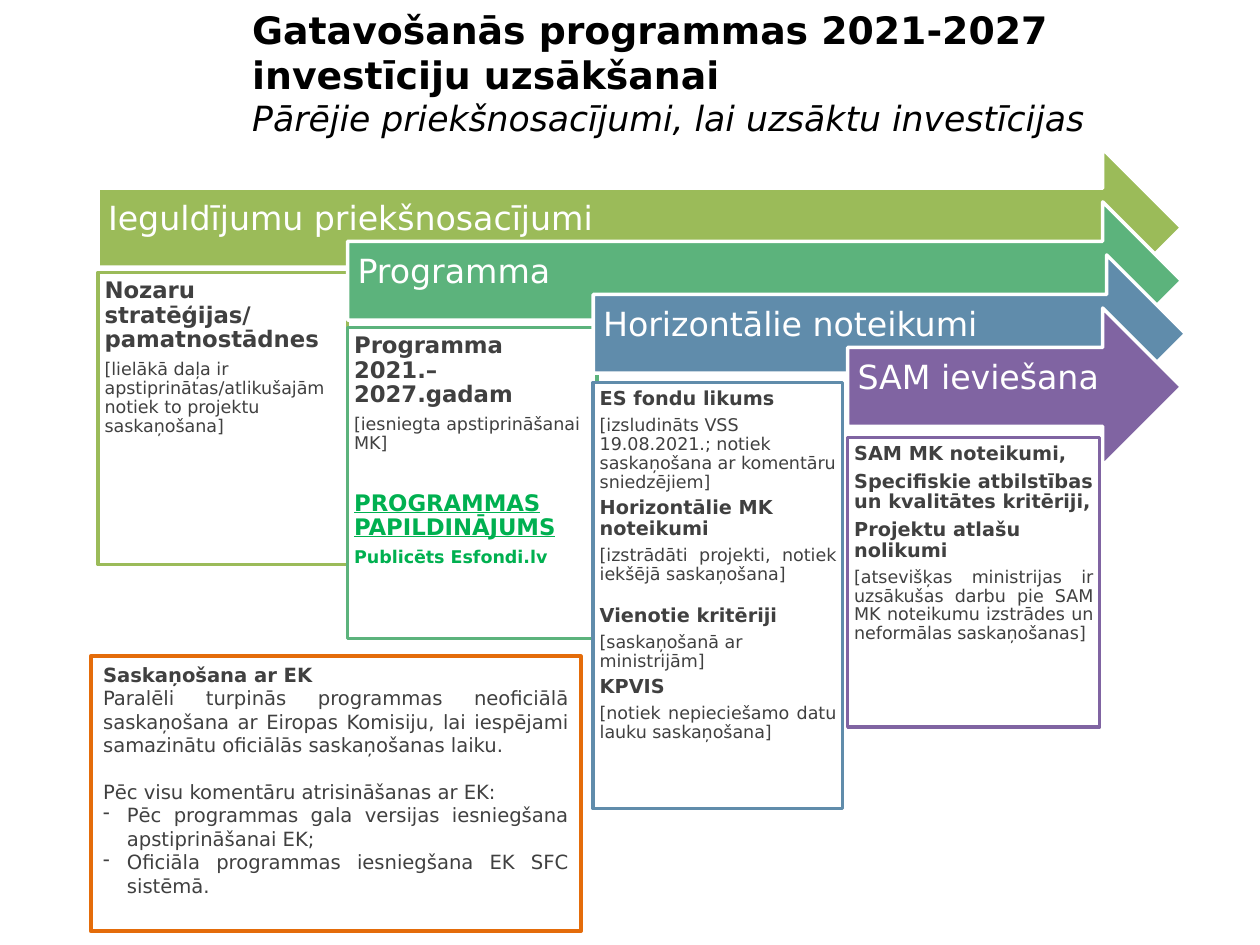
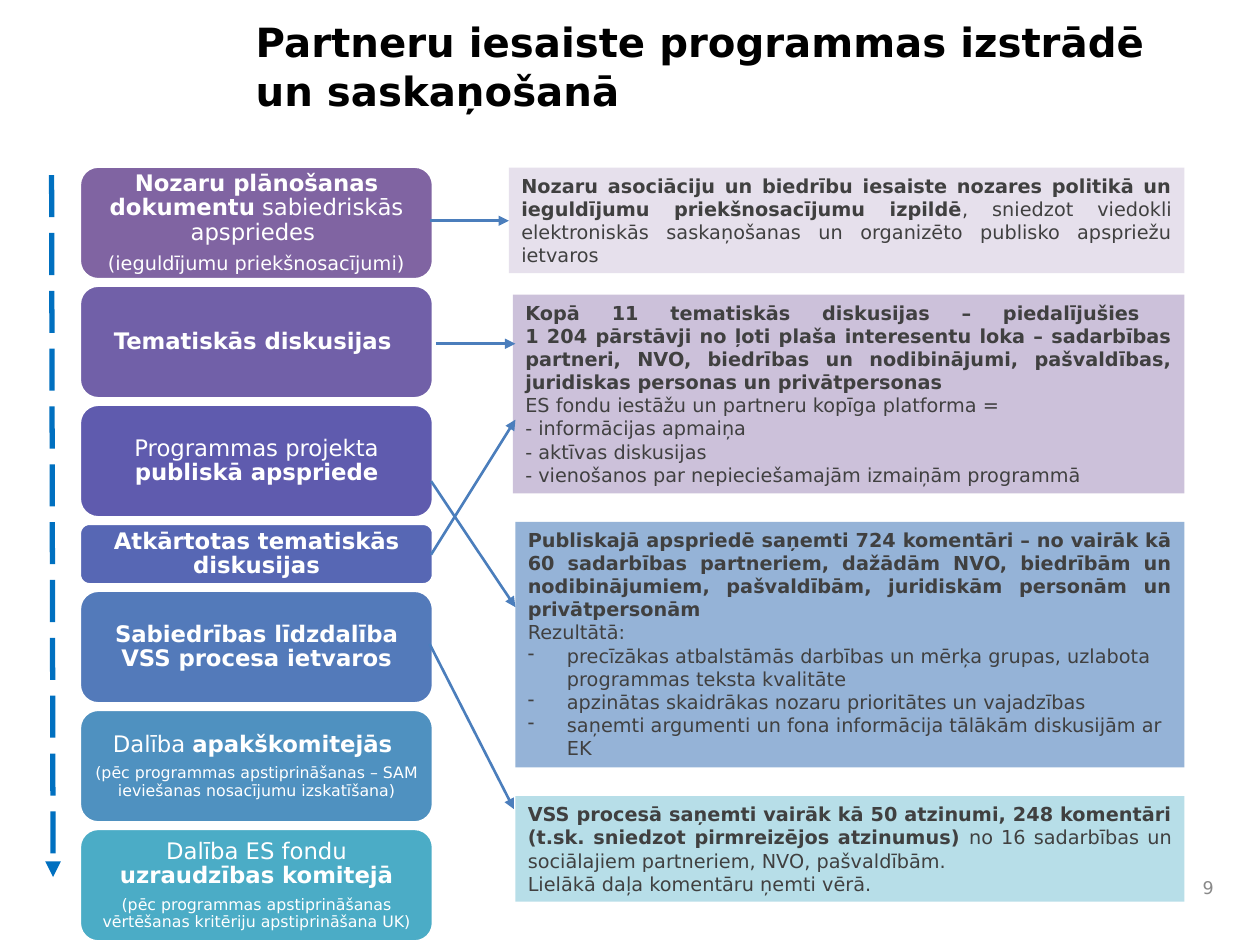
import copy
from dataclasses import dataclass
from typing import NamedTuple

import lxml.etree
import pptx
import pptx.dml.color
import pptx.enum.dml
import pptx.enum.shapes
import pptx.enum.text
import pptx.oxml.ns
import pptx.util

Cm = pptx.util.Cm
Pt = pptx.util.Pt
RGBColor = pptx.dml.color.RGBColor
Align = pptx.enum.text.PP_ALIGN
Anchor = pptx.enum.text.MSO_ANCHOR
Shape = pptx.enum.shapes.MSO_SHAPE
qn = pptx.oxml.ns.qn

FONT = "DejaVu Sans"
BLACK = RGBColor(0x00, 0x00, 0x00)
WHITE = RGBColor(0xFF, 0xFF, 0xFF)
TEXT_GREY = RGBColor(0x40, 0x40, 0x40)
NUMBER_GREY = RGBColor(0x89, 0x89, 0x89)
OLIVE = RGBColor(0x9B, 0xBB, 0x59)
GREEN = RGBColor(0x5C, 0xB3, 0x7C)
BRIGHT_GREEN = RGBColor(0x00, 0xB0, 0x50)
STEEL = RGBColor(0x60, 0x8C, 0xAB)
PURPLE = RGBColor(0x80, 0x64, 0xA2)
VIOLET = RGBColor(0x71, 0x60, 0xA8)
INDIGO = RGBColor(0x5F, 0x5B, 0xAE)
COBALT = RGBColor(0x57, 0x67, 0xB4)
BLUE = RGBColor(0x53, 0x7A, 0xBA)
SKY = RGBColor(0x4F, 0x91, 0xC0)
TEAL = RGBColor(0x4B, 0xAC, 0xC6)
ORANGE = RGBColor(0xE4, 0x6C, 0x0A)
PALE_LILAC = RGBColor(0xE6, 0xE0, 0xEC)
LILAC = RGBColor(0xCC, 0xC1, 0xDA)
PALE_BLUE = RGBColor(0x95, 0xB3, 0xD7)
PALE_TEAL = RGBColor(0xB7, 0xDE, 0xE8)
TIMELINE_BLUE = RGBColor(0x00, 0x70, 0xC0)
LINK_BLUE = RGBColor(0x4B, 0x7E, 0xBC)


class Box(NamedTuple):
    """Left, top, width and height in centimetres."""
    left: float
    top: float
    width: float
    height: float


class Span(NamedTuple):
    """Run of text; a final line feed breaks the line."""
    text: str
    size: float
    bold: bool = False
    italic: bool = False
    underline: bool = False
    color: RGBColor | None = None


@dataclass
class Para:
    spans: list[Span]
    align: Align = Align.LEFT
    before: float = 0
    dash_indent: float = 0


@dataclass
class Stage:
    name: str
    color: RGBColor
    left: float
    arrow_width: float
    box_width: float
    box_height: float
    paras: list[Para]


@dataclass
class Step:
    color: RGBColor
    paras: list[Para]
    height: float = 2.29


@dataclass
class Note:
    color: RGBColor
    left: float
    top: float
    height: float
    paras: list[Para]


def line(text: str, size: float, bold: bool = False, align: Align = Align.LEFT,
         before: float = 0, dash_indent: float = 0) -> Para:
    """Paragraph made of a single span."""
    return Para([Span(text, size, bold)], align, before, dash_indent)


def write(tf, paras: list[Para], color: RGBColor, tight: bool = False) -> None:
    """Fill a frame; tight text has 90% lines and gaps of 35% of its size."""
    tf.word_wrap = True
    tf.auto_size = pptx.enum.text.MSO_AUTO_SIZE.NONE
    for i, para in enumerate(paras):
        p = tf.paragraphs[0] if i == 0 else tf.add_paragraph()
        p.alignment = para.align
        if para.before:
            p.space_before = Pt(para.before)
        if tight:
            p.line_spacing = 0.9
            p.space_after = Pt(0.35 * para.spans[-1].size)
        if para.dash_indent:
            pPr = p._p.get_or_add_pPr()
            pPr.set("marL", str(Cm(para.dash_indent)))
            pPr.set("indent", str(-Cm(para.dash_indent)))
            lxml.etree.SubElement(pPr, qn("a:buChar")).set("char", "-")
        for span in para.spans:
            r = p.add_run()
            r.text = span.text.removesuffix("\n")
            r.font.name = FONT
            r.font.size = Pt(span.size)
            r.font.bold = span.bold
            r.font.italic = span.italic
            r.font.underline = span.underline
            r.font.color.rgb = span.color or color
            if span.text.endswith("\n"):
                p.add_line_break()
                p._p[-1].append(copy.deepcopy(r._r.rPr))


def add_title(s, box: Box, spans: list[Span]) -> None:
    title = s.shapes.title
    title.left, title.top, title.width, title.height = map(Cm, box)
    title.text_frame.vertical_anchor = Anchor.TOP
    write(title.text_frame, [Para(spans)], BLACK)


def add_block(s, kind: Shape, box: Box, fill: RGBColor | None, outline: RGBColor | None,
              weight: float = 2, anchor: Anchor = Anchor.TOP,
              margins: tuple[float, float, float, float] = (0.25, 0.13, 0.25, 0.13)):
    """Add a flat shape and return its text frame."""
    sp = s.shapes.add_shape(kind, *map(Cm, box))
    sp.shadow.inherit = False
    if fill is None:
        sp.fill.background()
    else:
        sp.fill.solid()
        sp.fill.fore_color.rgb = fill
    if outline is None:
        sp.line.fill.background()
    else:
        sp.line.color.rgb = outline
        sp.line.width = Pt(weight)
    tf = sp.text_frame
    tf.vertical_anchor = anchor
    tf.margin_left, tf.margin_top, tf.margin_right, tf.margin_bottom = map(Cm, margins)
    return tf


def add_arrow_line(s, ends: tuple[float, float, float, float], color: RGBColor,
                   weight: float, dashed: bool = False) -> None:
    cxn = s.shapes.add_connector(pptx.enum.shapes.MSO_CONNECTOR.STRAIGHT, *map(Cm, ends))
    cxn.line.color.rgb = color
    cxn.line.width = Pt(weight)
    if dashed:
        cxn.line.dash_style = pptx.enum.dml.MSO_LINE.LONG_DASH
    lxml.etree.SubElement(cxn.line._get_or_add_ln(), qn("a:tailEnd")).set("type", "triangle")
    lxml.etree.SubElement(cxn._element.spPr, qn("a:effectLst"))


STAGES = [
    Stage("Ieguldījumu priekšnosacījumi", OLIVE, 1.98, 21.84, 5.03, 5.89, [
        line("Nozaru stratēģijas/ pamatnostādnes", 13, True),
        line("[lielākā daļa ir apstiprinātas/atlikušajām notiek to projektu saskaņošana]", 10),
    ]),
    Stage("Programma", GREEN, 7.01, 16.81, 5.03, 6.27, [
        line("Programma 2021.–2027.gadam", 13, True),
        line("[iesniegta apstiprināšanai MK]", 10),
        Para([Span("PROGRAMMAS PAPILDINĀJUMS", 13, True, underline=True, color=BRIGHT_GREEN)],
             before=18.2),
        Para([Span("Publicēts Esfondi.lv", 10, True, color=BRIGHT_GREEN)]),
    ]),
    Stage("Horizontālie noteikumi", STEEL, 11.96, 11.94, 5.03, 8.59, [
        line("ES fondu likums", 11, True),
        line("[izsludināts VSS 19.08.2021.; notiek saskaņošana ar komentāru sniedzējiem]", 10),
        line("Horizontālie MK noteikumi", 11, True),
        line("[izstrādāti projekti, notiek iekšējā saskaņošana]", 10, align=Align.JUSTIFY),
        line("Vienotie kritēriji", 11, True, before=8.6),
        line("[saskaņošanā ar ministrijām]", 10),
        line("KPVIS", 11, True),
        line("[notiek nepieciešamo datu lauku saskaņošana]", 10, align=Align.JUSTIFY),
    ]),
    Stage("SAM ieviešana", PURPLE, 17.09, 6.73, 5.08, 5.84, [
        line("SAM MK noteikumi,", 11, True),
        line("Specifiskie atbilstības un kvalitātes kritēriji,", 11, True),
        line("Projektu atlašu nolikumi", 11, True),
        line("[atsevišķas ministrijas ir uzsākušas darbu pie SAM MK noteikumu izstrādes un "
             "neformālas saskaņošanas]", 10, align=Align.JUSTIFY),
    ]),
]
APPROVAL = [
    line("Saskaņošana ar EK", 11.2, True),
    line("Paralēli turpinās programmas neoficiālā saskaņošana ar Eiropas Komisiju, lai "
         "iespējami samazinātu oficiālās saskaņošanas laiku.", 11.2, align=Align.JUSTIFY),
    line("Pēc visu komentāru atrisināšanas ar EK:", 11.2, align=Align.JUSTIFY, before=13),
    line("Pēc programmas gala versijas iesniegšana apstiprināšanai EK;", 11.2,
         align=Align.JUSTIFY, dash_indent=0.48),
    line("Oficiāla programmas iesniegšana EK SFC sistēmā.", 11.2,
         align=Align.JUSTIFY, dash_indent=0.48),
]
STEPS = [
    Step(PURPLE, [
        Para([Span("Nozaru plānošanas dokumentu", 13, True),
              Span(" sabiedriskās apspriedes ", 13)], Align.CENTER),
        line("(ieguldījumu priekšnosacījumi)", 11, align=Align.CENTER)]),
    Step(VIOLET, [line("Tematiskās diskusijas ", 13, True, Align.CENTER)]),
    Step(INDIGO, [Para([Span("Programmas projekta ", 13),
                        Span("publiskā apspriede", 13, True)], Align.CENTER)]),
    Step(COBALT, [line("Atkārtotas tematiskās diskusijas", 13, True, Align.CENTER)], 1.24),
    Step(BLUE, [line("Sabiedrības līdzdalība VSS procesa ietvaros", 13, True, Align.CENTER)]),
    Step(SKY, [
        Para([Span("Dalība ", 13), Span("apakškomitejās ", 13, True)], Align.CENTER),
        line("(pēc programmas apstiprināšanas – SAM ieviešanas nosacījumu izskatīšana)", 9,
             align=Align.CENTER)]),
    Step(TEAL, [
        Para([Span("Dalība ES fondu ", 13), Span("uzraudzības komitejā", 13, True)],
             Align.CENTER),
        line("(pēc programmas apstiprināšanas vērtēšanas kritēriju apstiprināšana UK)", 9,
             align=Align.CENTER)]),
]
NOTES = [
    Note(PALE_LILAC, 10.26, 3.38, 2.13, [
        Para([Span("Nozaru asociāciju un biedrību iesaiste nozares politikā un ieguldījumu "
                   "priekšnosacījumu izpildē", 11, True),
              Span(", sniedzot viedokli elektroniskās saskaņošanas un organizēto publisko "
                   "apspriežu ietvaros", 11)], Align.JUSTIFY)]),
    Note(LILAC, 10.34, 5.94, 4.01, [
        Para([Span("Kopā 11 tematiskās diskusijas – piedalījušies \n", 11, True),
              Span("1 204 pārstāvji no ļoti plaša interesentu loka – sadarbības partneri, NVO, "
                   "biedrības un nodibinājumi, pašvaldības, juridiskas personas un "
                   "privātpersonas", 11, True)], Align.JUSTIFY),
        line("ES fondu iestāžu un partneru kopīga platforma = ", 11, align=Align.JUSTIFY),
        line("- informācijas apmaiņa", 11),
        line("- aktīvas diskusijas", 11),
        line("- vienošanos par nepieciešamajām izmaiņām programmā", 11)]),
    Note(PALE_BLUE, 10.39, 10.52, 4.95, [
        line("Publiskajā apspriedē saņemti 724 komentāri – no vairāk kā 60 sadarbības "
             "partneriem, dažādām NVO, biedrībām un nodibinājumiem, pašvaldībām, juridiskām "
             "personām un privātpersonām", 11, True, Align.JUSTIFY),
        line("Rezultātā:", 11),
        line("precīzākas atbalstāmās darbības un mērķa grupas, uzlabota programmas teksta "
             "kvalitāte", 11, dash_indent=0.79),
        line("apzinātas skaidrākas nozaru prioritātes un vajadzības", 11, dash_indent=0.79),
        line("saņemti argumenti un fona informācija tālākām diskusijām ar EK", 11,
             dash_indent=0.79)]),
    Note(PALE_TEAL, 10.39, 16.05, 2.13, [
        Para([Span("VSS procesā saņemti vairāk kā 50 atzinumi, 248 komentāri (t.sk. sniedzot "
                   "pirmreizējos atzinumus) ", 11, True),
              Span("no 16 sadarbības un sociālajiem partneriem, NVO, pašvaldībām.", 11)],
             Align.JUSTIFY),
        line("Lielākā daļa komentāru ņemti vērā.", 11)]),
]
STEP_TO_NOTE = [
    (8.66, 4.45, 10.26, 4.45),
    (8.79, 6.93, 10.39, 6.93),
    (8.69, 9.7, 10.39, 12.24),
    (8.69, 11.18, 10.39, 8.46),
    (8.66, 12.98, 10.36, 16.31),
]
NOTES_RIGHT = 23.88
STEP_GAP = 0.11


def build_preparation(s) -> None:
    add_title(s, Box(4.83, 0, 18.01, 3.84), [
        Span("Gatavošanās programmas 2021-2027 investīciju uzsākšanai\n", 21.6, True),
        Span("Pārējie priekšnosacījumi, lai uzsāktu investīcijas", 19.8, italic=True)])
    for i, stage in enumerate(STAGES):
        arrow = Box(stage.left, 3 + 1.07 * i, stage.arrow_width, 3.18)
        tf = add_block(s, Shape.RIGHT_ARROW, arrow, stage.color, WHITE,
                       anchor=Anchor.MIDDLE, margins=(0.2, 0.2, 0.71, 0.51))
        write(tf, [line(stage.name, 19)], WHITE, tight=True)
        details = Box(stage.left, 5.49 + 1.11 * i, stage.box_width, stage.box_height)
        tf = add_block(s, Shape.RECTANGLE, details, WHITE, stage.color, margins=(0.13,) * 4)
        write(tf, stage.paras, TEXT_GREY, tight=True)
    tf = add_block(s, Shape.RECTANGLE, Box(1.83, 13.23, 9.88, 5.54), None, ORANGE, 2.25)
    write(tf, APPROVAL, TEXT_GREY)


def build_partners(s) -> None:
    add_title(s, Box(4.9, 0.23, 18.95, 2.87),
              [Span("Partneru iesaiste programmas izstrādē un saskaņošanā", 23, True)])
    top = 3.35
    for step in STEPS:
        tf = add_block(s, Shape.ROUNDED_RECTANGLE, Box(1.6, top, 7.14, step.height),
                       step.color, WHITE, anchor=Anchor.MIDDLE,
                       margins=(0.13, 0.08, 0.13, 0.08))
        write(tf, step.paras, WHITE, tight=True)
        top += step.height + STEP_GAP
    for note in NOTES:
        box = Box(note.left, note.top, NOTES_RIGHT - note.left, note.height)
        write(add_block(s, Shape.RECTANGLE, box, note.color, None), note.paras, TEXT_GREY)
    add_arrow_line(s, (1.04, 3.53, 1.07, 17.68), TIMELINE_BLUE, 3, dashed=True)
    for ends in STEP_TO_NOTE:
        add_arrow_line(s, ends, LINK_BLUE, 1.5)
    number = s.shapes.add_textbox(*map(Cm, Box(22.99, 17.35, 1.73, 1.07))).text_frame
    number.vertical_anchor = Anchor.MIDDLE
    write(number, [line("9", 10, align=Align.RIGHT)], NUMBER_GREY)


def main() -> None:
    prs = pptx.Presentation()
    prs.slide_width, prs.slide_height = Cm(25.4), Cm(19.05)
    title_only = prs.slide_layouts[5]
    for build in (build_preparation, build_partners):
        build(prs.slides.add_slide(title_only))
    prs.save("out.pptx")


if __name__ == "__main__":
    main()
